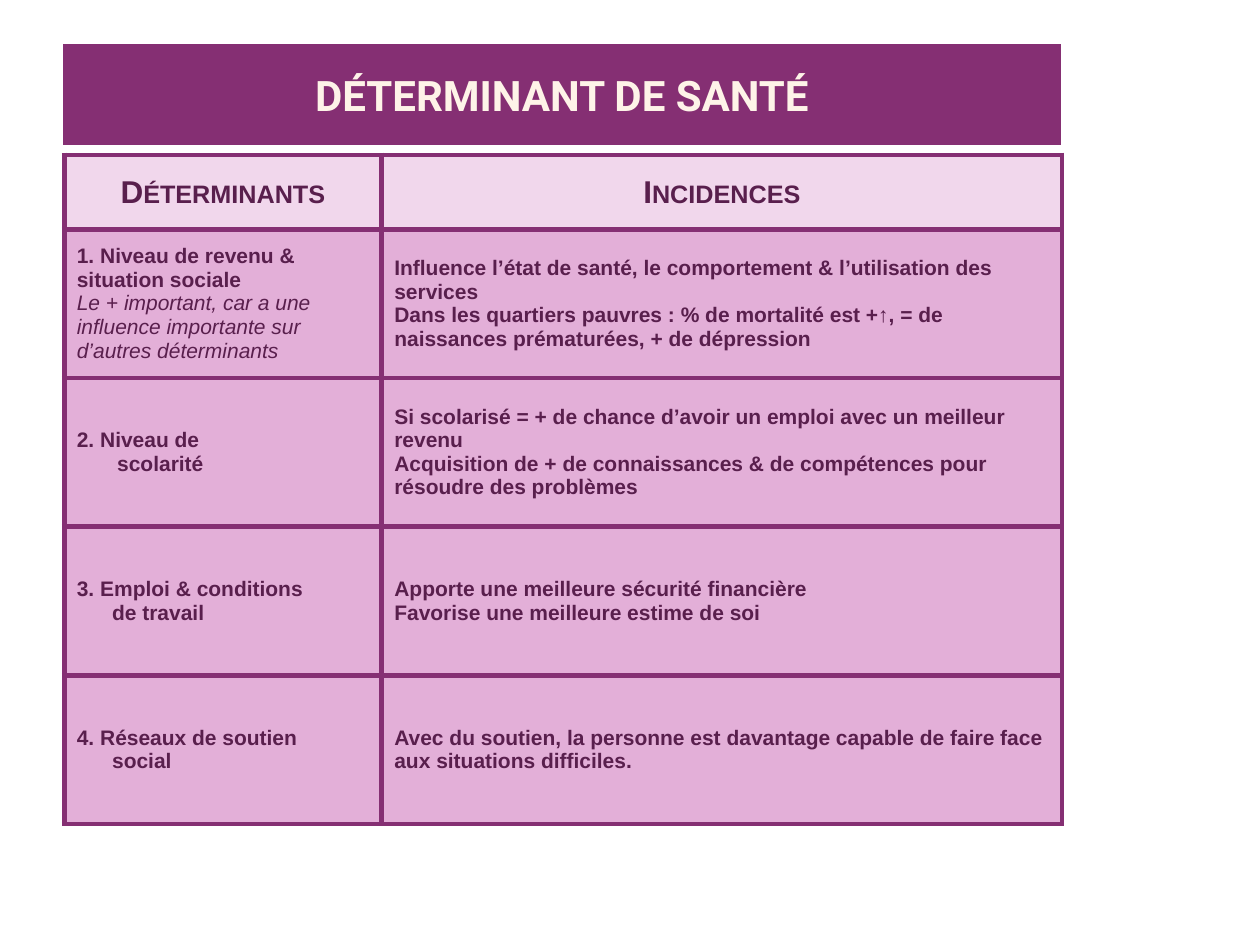
from dataclasses import dataclass
from lxml.etree import SubElement
from pptx import Presentation
from pptx.dml.color import RGBColor as RGB
from pptx.enum.shapes import MSO_SHAPE as SHAPE
from pptx.enum.text import MSO_ANCHOR as ANCHOR, PP_ALIGN as ALIGN
from pptx.oxml.ns import qn
from pptx.util import Inches, Pt


@dataclass(frozen=True)
class Theme:
    plum: str = "852F73"
    ink: str = "591F4D"
    cream: str = "FEF3E8"
    head: str = "F1D7EC"
    body: str = "E3AFD8"
    title_font: str = "Roboto"
    font: str = "Arial"
    title_size: int = 24
    head_size: int = 18
    body_size: int = 12
    border: int = 3


T = Theme()
TITLE = "DÉTERMINANT DE SANTÉ"
HEADERS = ["Déterminants", "Incidences"]
ROWS = [
    ([("1. Niveau de revenu & situation sociale", {}),
      ("Le + important, car a une influence importante sur d’autres déterminants",
       dict(bold=False, italic=True))],
     [("Influence l’état de santé, le comportement & l’utilisation des services", {}),
      ("Dans les quartiers pauvres\u00a0: % de mortalité est +↑, = de naissances prématurées, + de dépression", {})]),
    ([("2. Niveau de", {}), ("scolarité", dict(indent=0.32))],
     [("Si scolarisé = + de chance d’avoir un emploi avec un meilleur revenu", {}),
      ("Acquisition de + de connaissances & de compétences pour résoudre des problèmes", {})]),
    ([("3. Emploi & conditions", {}), ("de travail", dict(indent=0.28))],
     [("Apporte une meilleure sécurité financière", {}),
      ("Favorise une meilleure estime de soi", {})]),
    ([("4. Réseaux de soutien", {}), ("social", dict(indent=0.28))],
     [("Avec du soutien, la personne est davantage capable de faire face aux situations difficiles.", {})]),
]
LEFT, WIDTH = 0.5, 7.92
TITLE_TOP, TITLE_H = 0.35, 0.8
TABLE_LEFT, TABLE_TOP = 0.51, 1.23
COLS = [2.52, 5.4]
HEAD_H, ROW_H = 0.59, 1.18


def write(p, text, font=T.font, size=T.body_size, color=T.ink, bold=True,
          italic=False, align=ALIGN.LEFT, small_caps=False, indent=0):
    p.alignment = align
    if indent:
        p._p.get_or_add_pPr().set("marL", str(Inches(indent)))
    r = p.add_run()
    r.text = text
    f = r.font
    f.name, f.size, f.bold, f.italic = font, Pt(size), bold, italic
    f.color.rgb = RGB.from_string(color)
    if small_caps:
        f._element.set("cap", "small")


def fill_cell(cell, lines, color):
    tc_pr = cell._tc.get_or_add_tcPr()
    for side in ("lnL", "lnR", "lnT", "lnB"):
        ln = SubElement(tc_pr, qn(f"a:{side}"), w=str(Pt(T.border)))
        SubElement(SubElement(ln, qn("a:solidFill")), qn("a:srgbClr"), val=T.plum)
    cell.fill.solid()
    cell.fill.fore_color.rgb = RGB.from_string(color)
    cell.vertical_anchor = ANCHOR.MIDDLE
    tf = cell.text_frame
    for i, (text, fmt) in enumerate(lines):
        write(tf.add_paragraph() if i else tf.paragraphs[0], text, **fmt)


def add_title(s):
    sp = s.shapes.add_shape(SHAPE.RECTANGLE, Inches(LEFT), Inches(TITLE_TOP),
                            Inches(WIDTH), Inches(TITLE_H))
    sp.shadow.inherit = False
    sp.fill.solid()
    sp.fill.fore_color.rgb = RGB.from_string(T.plum)
    sp.line.fill.background()
    tf = sp.text_frame
    tf.word_wrap = True
    tf.vertical_anchor = ANCHOR.MIDDLE
    tf.margin_left = tf.margin_right = Inches(0.05)
    tf.margin_top = tf.margin_bottom = 0
    write(tf.paragraphs[0], TITLE, font=T.title_font, size=T.title_size,
          color=T.cream, align=ALIGN.CENTER)


def add_grid(s):
    heights = [HEAD_H] + [ROW_H] * len(ROWS)
    table = s.shapes.add_table(len(heights), len(COLS), Inches(TABLE_LEFT),
                               Inches(TABLE_TOP), Inches(sum(COLS)),
                               Inches(sum(heights))).table
    table.first_row = table.horz_banding = False
    for col, w in zip(table.columns, COLS):
        col.width = Inches(w)
    for row, h in zip(table.rows, heights):
        row.height = Inches(h)
    head_fmt = dict(size=T.head_size, align=ALIGN.CENTER, small_caps=True)
    header = [[(text, head_fmt)] for text in HEADERS]
    for i, row in enumerate([header, *ROWS]):
        for j, lines in enumerate(row):
            fill_cell(table.cell(i, j), lines, T.body if i else T.head)


def main():
    prs = Presentation()
    prs.slide_width, prs.slide_height = Inches(10), Inches(7.5)
    s = prs.slides.add_slide(prs.slide_layouts[6])
    add_title(s)
    add_grid(s)
    prs.save("out.pptx")


if __name__ == "__main__":
    main()
